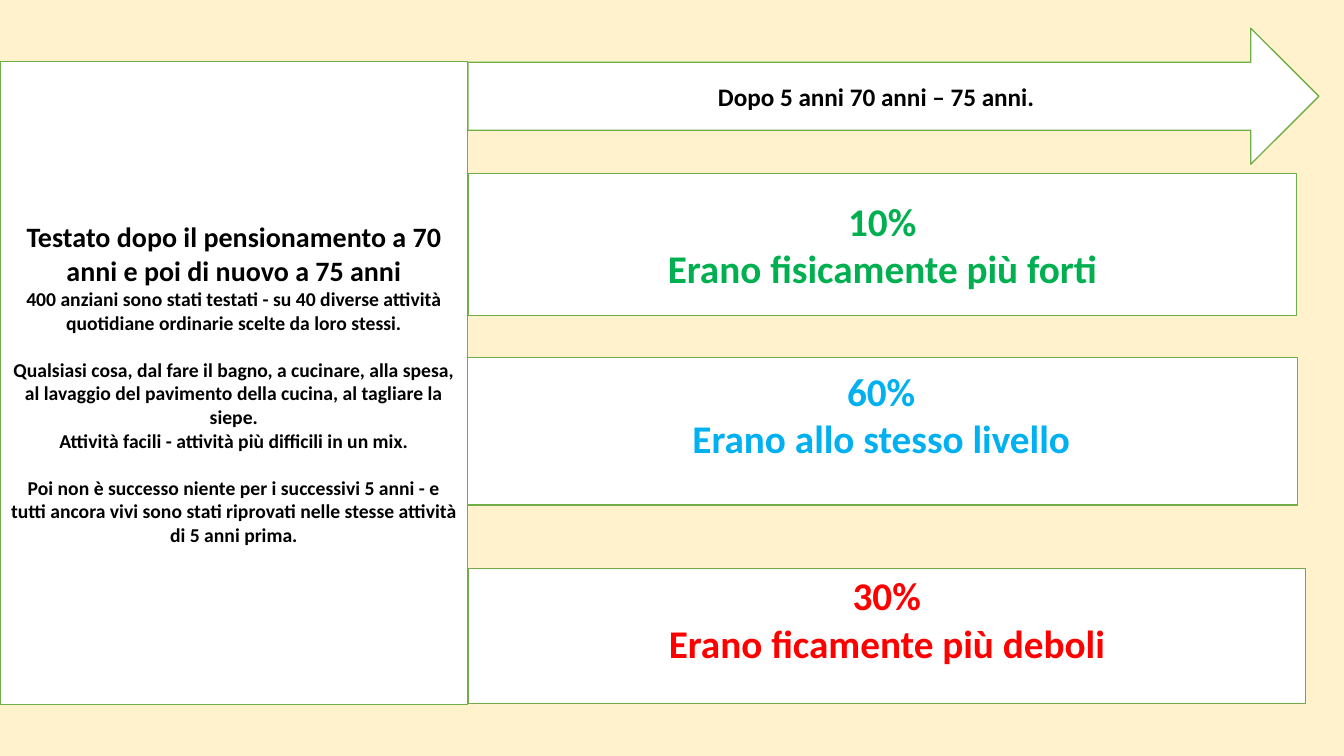
from pptx import Presentation, util as u
from pptx.dml.color import RGBColor
from pptx.enum import shapes, text

COLORS = {
    "background": "FFF2CC", "panel": "FFFFFF", "outline": "70AD47", "ink": "000000",
    "stronger": "00B050", "same": "00B0F0", "weaker": "FF0000",
}
FRAME_FORMAT = {"word_wrap": True, "vertical_anchor": text.MSO_ANCHOR.MIDDLE}
FONT_FORMAT = {"name": "Calibri", "bold": True}

TIMELINE = "Dopo 5 anni 70 anni – 75 anni."
STUDY = [
    ("Testato dopo il pensionamento a 70 anni e poi di nuovo a 75 anni", 20, 0),
    ("400 anziani sono stati testati - su 40 diverse attività quotidiane "
     "ordinarie scelte da loro stessi.", 14, 0),
    ("Qualsiasi cosa, dal fare il bagno, a cucinare, alla spesa, al lavaggio "
     "del pavimento della cucina, al tagliare la siepe.", 14, 17),
    ("Attività facili - attività più difficili in un mix.", 14, 0),
    ("Poi non è successo niente per i successivi 5 anni - e tutti ancora vivi "
     "sono stati riprovati nelle stesse attività di 5 anni prima.", 14, 17),
]
OUTCOMES = [
    ("10%", "Erano fisicamente più forti", "stronger", (4.64, 1.72, 8.22, 1.41), 0.05),
    ("60%", "Erano allo stesso livello", "same", (4.61, 3.55, 8.26, 1.46), 0.39),
    ("30%", "Erano ficamente più deboli", "weaker", (4.64, 5.64, 8.31, 1.34), 0.39),
]


def apply_format(target, values):
    """Set each named attribute on the target."""
    for attribute, value in values.items():
        setattr(target, attribute, value)


def rgb(name):
    """Return the named palette colour."""
    return RGBColor.from_string(COLORS[name])


def add_panel(slide, kind, box, lines, ink):
    """Place an outlined white panel with centred (text, size, space before) lines."""
    panel = slide.shapes.add_shape(kind, *map(u.Inches, box))
    panel.shadow.inherit = False
    panel.fill.solid()
    panel.fill.fore_color.rgb = rgb("panel")
    panel.line.color.rgb = rgb("outline")
    panel.line.width = u.Pt(1)
    frame = panel.text_frame
    apply_format(frame, FRAME_FORMAT)
    for index, (wording, size, gap) in enumerate(lines):
        paragraph = frame.add_paragraph() if index else frame.paragraphs[0]
        apply_format(paragraph, {"alignment": text.PP_ALIGN.CENTER, "space_before": u.Pt(gap)})
        run = paragraph.add_run()
        run.text = wording
        apply_format(run.font, {**FONT_FORMAT, "size": u.Pt(size)})
        run.font.color.rgb = rgb(ink)
    return panel


def add_outcome(slide, box, share, finding, ink, bottom_inset):
    """Place one result band with its share above its finding."""
    lines = [(share, 28, 0), (finding, 28, 0)]
    band = add_panel(slide, shapes.MSO_SHAPE.RECTANGLE, box, lines, ink)
    band.text_frame.margin_bottom = u.Inches(bottom_inset)


def add_timeline(slide, box):
    """Place the arrow that names the five-year span."""
    add_panel(slide, shapes.MSO_SHAPE.RIGHT_ARROW, box, [(TIMELINE, 18, 0)], "ink")


def add_study(slide, box):
    """Place the panel that describes the study."""
    add_panel(slide, shapes.MSO_SHAPE.RECTANGLE, box, STUDY, "ink")


def main():
    """Build and save the slide."""
    deck = Presentation()
    apply_format(deck, {"slide_width": u.Inches(13.33), "slide_height": u.Inches(7.5)})
    slide = deck.slides.add_slide(deck.slide_layouts[6])
    slide.background.fill.solid()
    slide.background.fill.fore_color.rgb = rgb("background")
    for share, finding, ink, box, bottom_inset in OUTCOMES:
        add_outcome(slide, box, share, finding, ink, bottom_inset)
    add_timeline(slide, (4.64, 0.28, 8.44, 1.35))
    add_study(slide, (0, 0.61, 4.64, 6.38))
    deck.save("out.pptx")


if __name__ == "__main__":
    main()
